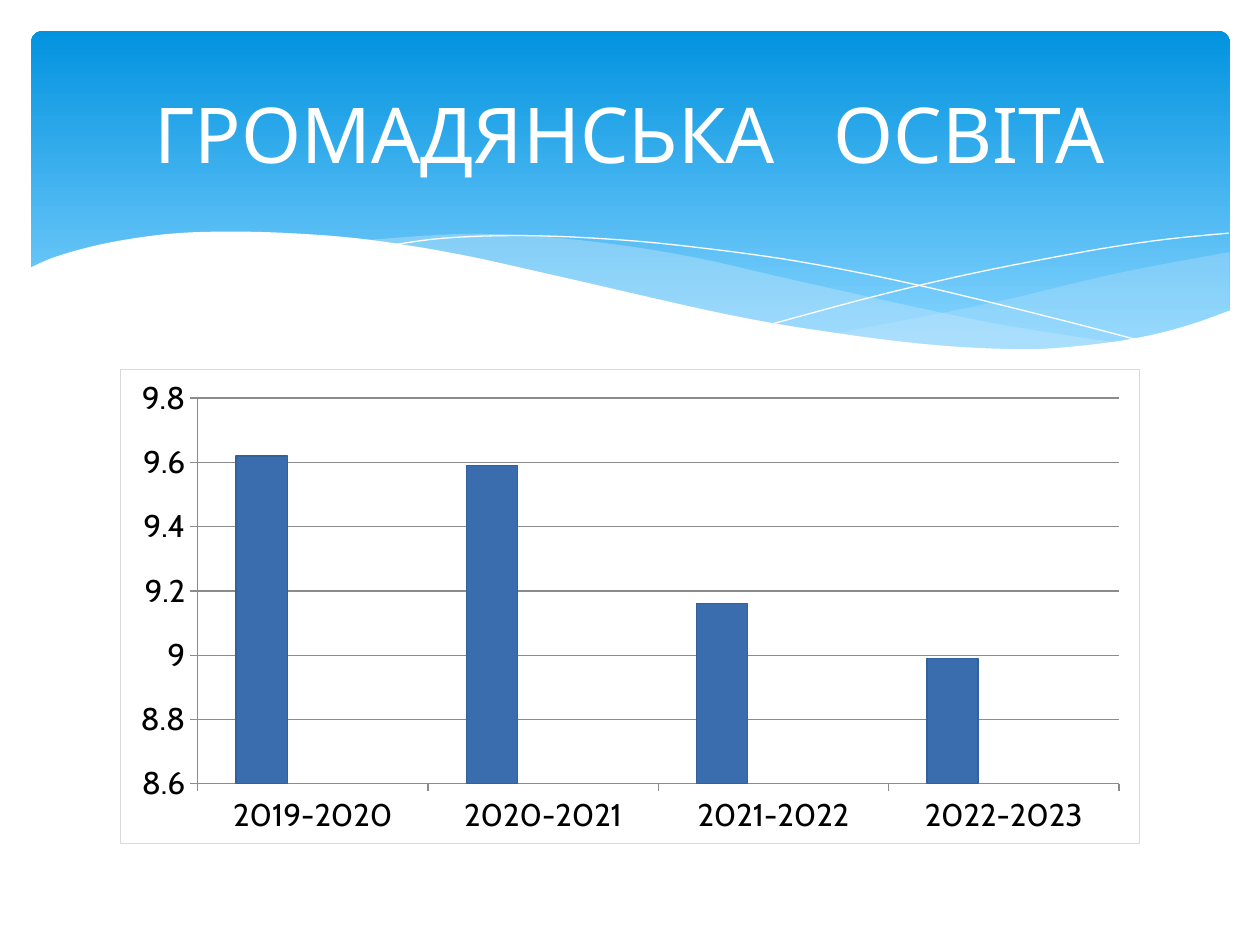
from lxml.etree import SubElement
from pptx import Presentation
from pptx.chart.data import CategoryChartData
from pptx.dml.color import RGBColor
from pptx.enum.chart import XL_CHART_TYPE as ChartType, XL_TICK_MARK as TickMark
from pptx.enum.shapes import MSO_SHAPE as Preset
from pptx.enum.text import MSO_ANCHOR as Anchor, PP_ALIGN as Align
from pptx.oxml import parse_xml
from pptx.oxml.ns import nsdecls, qn
from pptx.util import Cm, Pt

YEARS = ["2019-2020", "2020-2021", "2021-2022", "2022-2023"]
SERIES = [
    ("Series 1", [9.62, 9.59, 9.16, 8.99], "396DAE"),
    ("Series 2", [None] * 4, "4584D3"),
    ("Series 3", [None] * 4, "A7BBE3"),
]

# Points that each wave passes through, in centimetres
RIGHT_WAVE = [
    [(24.79, 5.08), (23.01, 5.41), (21.87, 5.66), (19.79, 6.15), (16.79, 6.73)],
    [(16.79, 6.73), (18.26, 6.91), (19.53, 7.04), (20.68, 7.06), (21.92, 6.99),
     (22.99, 6.83), (23.93, 6.58), (24.79, 6.27)],
]
MIDDLE_WAVE = [
    [(22.68, 6.93), (20.5, 6.6), (18.82, 6.27), (15.98, 5.64), (14.1, 5.21),
     (12.42, 4.93), (10.67, 4.75), (9.17, 4.72), (7.26, 4.85)],
    [(7.26, 4.85), (9.19, 5.16), (11.4, 5.64), (14.38, 6.3), (16.51, 6.71),
     (18.34, 6.96), (19.94, 7.06), (21.29, 7.06), (22.68, 6.93)],
]
FALLING_LINE = [
    [(7.85, 4.95), (8.97, 4.8), (10.57, 4.75), (12.42, 4.83), (14.15, 5),
     (16.15, 5.28), (18.47, 5.74), (21.11, 6.38), (23.04, 6.88)],
]
RISING_LINE = [
    [(15.57, 6.53), (17.65, 5.97), (19.71, 5.49), (22, 5.05), (23.47, 4.83),
     (24.77, 4.7)],
]
FRONT_WAVE = [
    [(24.82, 6.25), (23.88, 6.58), (22.83, 6.83), (21.59, 6.99), (20.55, 7.04),
     (18.9, 6.96), (16.97, 6.73), (14.71, 6.35), (11.35, 5.59), (9.27, 5.13),
     (7.42, 4.83), (5.84, 4.7), (4.5, 4.67), (3.35, 4.72), (2.16, 4.9),
     (1.17, 5.16), (0.58, 5.41)],
    [(0.58, 8.36), (24.82, 8.36)],
]


def color(hex_value):
    return RGBColor.from_string(hex_value)


def apply(target, values):
    for name, value in values.items():
        setattr(target, name, value)


def smooth(knots, steps=6):
    """Return points on a Catmull-Rom curve through the knots."""
    if len(knots) < 3:
        return knots
    padded = [knots[0], *knots, knots[-1]]
    points = [knots[0]]
    for a, b, c, d in zip(padded, padded[1:], padded[2:], padded[3:]):
        for step in range(1, steps + 1):
            t = step / steps
            points.append(tuple(
                (2 * q + (r - p) * t + (2 * p - 5 * q + 4 * r - s) * t ** 2
                 + (3 * q - p - 3 * r + s) * t ** 3) / 2
                for p, q, r, s in zip(a, b, c, d)))
    return points


class SlideBuilder:
    font = "Cabin"
    axis_color = "8B8B8B"
    bar_outline = "33619C"
    border = "D9D9D9"

    def __init__(self, slide):
        self.slide = slide
        self.shapes = slide.shapes

    def outline(self, line, hex_value, width=0.75):
        line.color.rgb = color(hex_value)
        line.width = Pt(width)

    def banner(self, box, radius, stops):
        shape = self.shapes.add_shape(Preset.ROUNDED_RECTANGLE, *map(Cm, box))
        shape.shadow.inherit = False
        shape.adjustments[0] = radius
        shape.line.fill.background()
        shape.fill.gradient()
        shape.fill.gradient_angle = 90
        for stop, (position, hex_value) in zip(shape.fill.gradient_stops, stops):
            stop.position = position
            stop.color.rgb = color(hex_value)

    def wave(self, curves, fill=None, opacity=100):
        """Draw a filled wave, or an open white hairline without a fill."""
        points = [(Cm(x), Cm(y)) for curve in curves for x, y in smooth(curve)]
        builder = self.shapes.build_freeform(*points[0])
        builder.add_line_segments(points[1:], close=fill is not None)
        shape = builder.convert_to_shape()
        shape.shadow.inherit = False
        if fill is None:
            shape.fill.background()
            self.outline(shape.line, "FFFFFF", 0)
            return
        shape.line.fill.background()
        shape.fill.solid()
        shape.fill.fore_color.rgb = color(fill)
        if opacity < 100:
            tint = shape.fill._xPr.find(f".//{qn('a:srgbClr')}")
            SubElement(tint, qn("a:alpha"), val=str(opacity * 1000))

    def title(self, box, words, size, word_gap):
        frame = self.shapes.add_textbox(*map(Cm, box)).text_frame
        apply(frame, {"word_wrap": True, "vertical_anchor": Anchor.MIDDLE})
        paragraph = frame.paragraphs[0]
        paragraph.alignment = Align.CENTER
        first, last = words
        for text in (first, " ", last):
            run = paragraph.add_run()
            run.text = text
            apply(run.font, {"name": self.font, "size": Pt(size)})
            run.font.color.rgb = color("FFFFFF")
            if text == " ":
                run.font._element.set("spc", str(word_gap * 100))

    def axis(self, axis, values):
        apply(axis, {"major_tick_mark": TickMark.OUTSIDE,
                     "minor_tick_mark": TickMark.NONE, **values})
        self.outline(axis.format.line, self.axis_color)
        font = axis.tick_labels.font
        apply(font, {"name": self.font, "size": Pt(18)})
        font.color.rgb = color("000000")

    def column_chart(self, box, categories, series_list):
        data = CategoryChartData()
        data.categories = categories
        for name, values, _ in series_list:
            data.add_series(name, values)
        chart = self.shapes.add_chart(
            ChartType.COLUMN_CLUSTERED, *map(Cm, box), data).chart
        apply(chart, {"has_legend": False, "has_title": False})
        apply(chart.font, {"name": "Arial", "size": Pt(10)})
        apply(chart.plots[0], {"gap_width": 150, "vary_by_categories": False})
        for series, (_, _, hex_value) in zip(chart.plots[0].series, series_list):
            series.format.fill.solid()
            series.format.fill.fore_color.rgb = color(hex_value)
            self.outline(series.format.line, self.bar_outline)
        self.axis(chart.category_axis, {"has_major_gridlines": False})
        self.axis(chart.value_axis, {
            "has_major_gridlines": True, "minimum_scale": 8.6,
            "maximum_scale": 9.8, "major_unit": 0.2})
        self.outline(chart.value_axis.major_gridlines.format.line, self.axis_color)
        labels = chart.value_axis.tick_labels
        apply(labels, {"number_format": "General", "number_format_is_linked": False})
        chart._chartSpace.chart.addnext(parse_xml(
            f'<c:spPr {nsdecls("c", "a")}><a:noFill/><a:ln w="{Pt(0.75)}"><a:solidFill>'
            f'<a:srgbClr val="{self.border}"/></a:solidFill></a:ln></c:spPr>'))


def main():
    presentation = Presentation()
    apply(presentation, {"slide_width": Cm(25.4), "slide_height": Cm(19.05)})
    builder = SlideBuilder(
        presentation.slides.add_slide(presentation.slide_layouts[6]))
    builder.banner((0.63, 0.63, 24.16, 6.86), 0.034,
                   [(0.1, "83D3FE"), (1, "0293E0")])
    builder.wave(RIGHT_WAVE, "C6E7FC", 29)
    builder.wave(MIDDLE_WAVE, "C6E7FC", 40)
    builder.wave(FALLING_LINE)
    builder.wave(RISING_LINE)
    builder.wave(FRONT_WAVE, "FFFFFF")
    builder.column_chart((2.41, 7.44, 20.57, 9.58), YEARS, SERIES)
    builder.title((1.27, 0.94, 22.86, 3.48), ("ГРОМАДЯНСЬКА", "ОСВІТА"), 44, 23)
    presentation.save("out.pptx")


if __name__ == "__main__":
    main()
